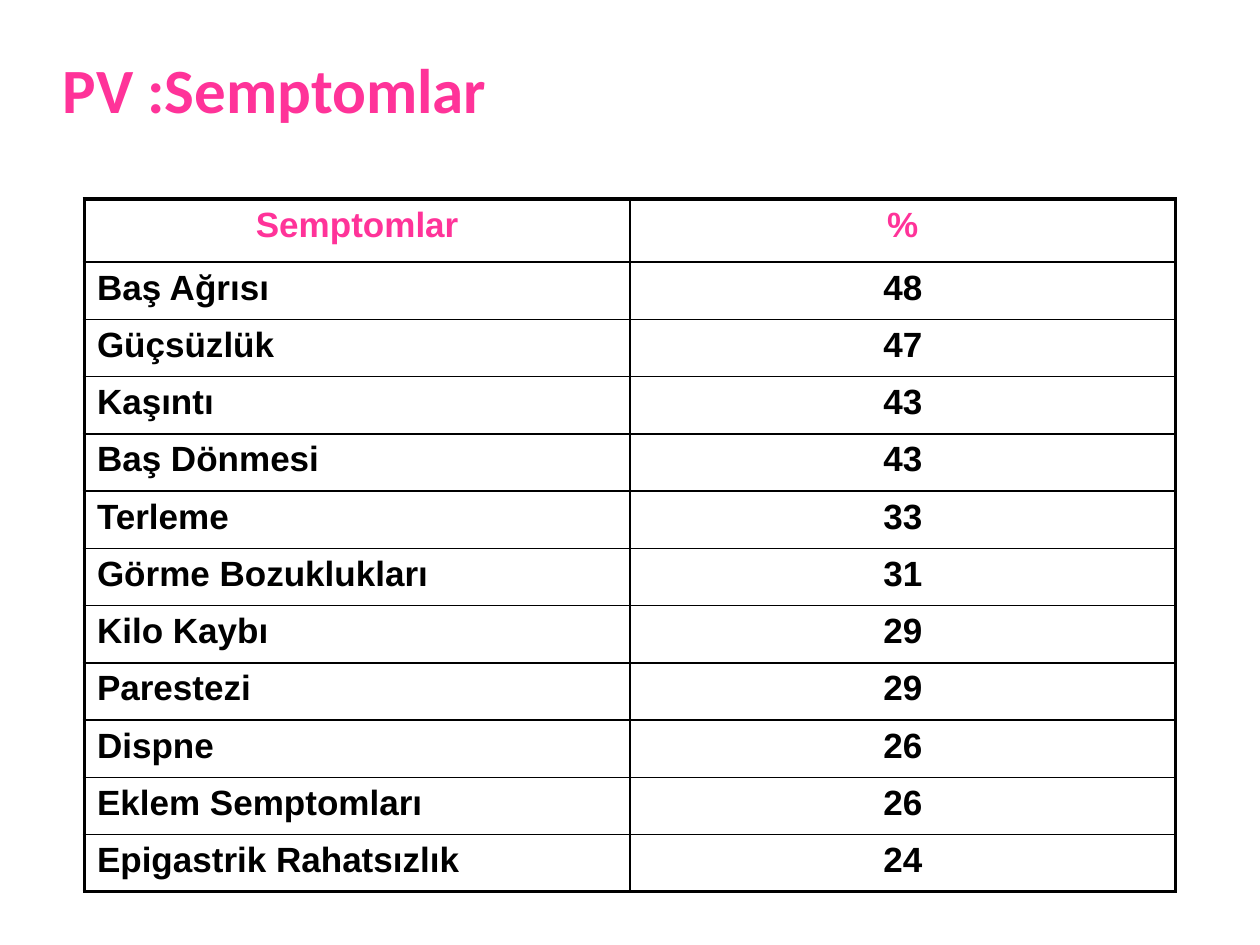
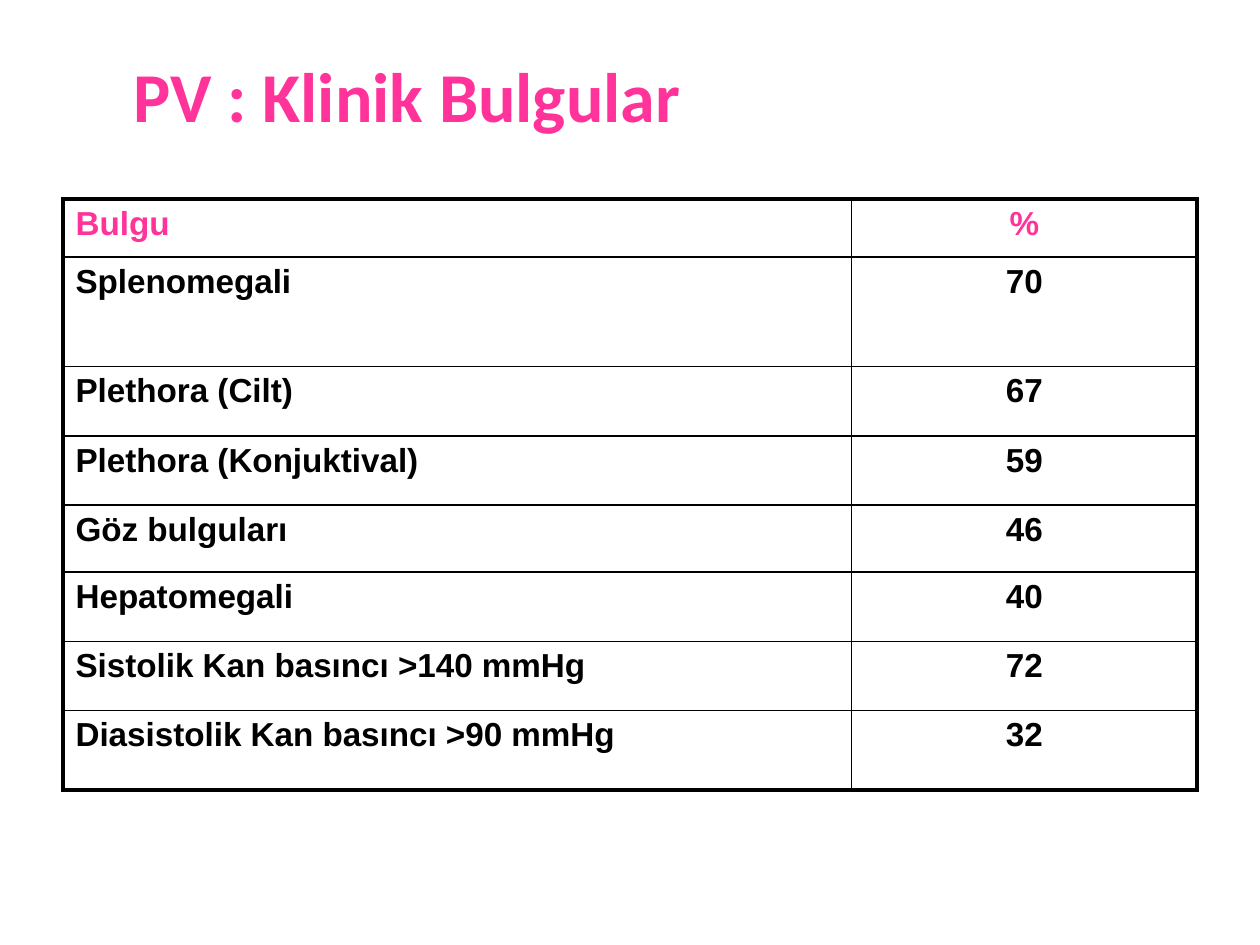
from lxml import etree
from pptx import Presentation
from pptx.dml.color import RGBColor
from pptx.enum.text import MSO_ANCHOR, PP_ALIGN
from pptx.oxml.ns import qn
from pptx.util import Inches, Pt

PINK = RGBColor(0xFF, 0x33, 0x99)
BLACK = RGBColor(0x00, 0x00, 0x00)
WHITE = RGBColor(0xFF, 0xFF, 0xFF)
LEFT, CENTER = PP_ALIGN.LEFT, PP_ALIGN.CENTER
BOTTOM = MSO_ANCHOR.BOTTOM
TITLE_FONT, TABLE_FONT = "Calibri", "Arial"
TABLE_TOP = 1.58
OUTER_LINE, INNER_LINE = Pt(2.25), Pt(1)

symptoms = [
    ("Semptomlar", "%"),
    ("Baş Ağrısı", "48"),
    ("Güçsüzlük", "47"),
    ("Kaşıntı", "43"),
    ("Baş Dönmesi", "43"),
    ("Terleme", "33"),
    ("Görme Bozuklukları", "31"),
    ("Kilo Kaybı", "29"),
    ("Parestezi", "29"),
    ("Dispne", "26"),
    ("Eklem Semptomları", "26"),
    ("Epigastrik Rahatsızlık", "24"),
]
findings = [
    ("Bulgu", "%"),
    ("Splenomegali", "70"),
    ("Plethora (Cilt)", "67"),
    ("Plethora (Konjuktival)", "59"),
    ("Göz bulguları", "46"),
    ("Hepatomegali", "40"),
    ("Sistolik Kan basıncı >140 mmHg", "72"),
    ("Diasistolik Kan basıncı >90 mmHg", "32"),
]

# Title, title box, title size, table left, columns, rows, header alignment, text size, data
slide_plans = [
    ("PV :Semptomlar", (0.5, 0.31, 9, 0.69), 36, 0.67, [4.33, 4.33],
     [0.5] + [5 / 11] * 11, CENTER, 20, symptoms),
    ("PV : Klinik Bulgular", (1.06, 0.25, 8, 0.83), 40, 0.5, [6.26, 2.74],
     [0.46, 0.87, 0.55, 0.55, 0.53, 0.55, 0.55, 0.63], LEFT, 19, findings),
]


def style_paragraph(paragraph, font_name, size, color, alignment=LEFT):
    paragraph.alignment = alignment
    paragraph.font.name = font_name
    paragraph.font.size = Pt(size)
    paragraph.font.bold = True
    paragraph.font.color.rgb = color


def set_borders(cell, outer_edges):
    properties = cell._tc.get_or_add_tcPr()
    for position, (edge, is_outer) in enumerate(outer_edges.items()):
        width = OUTER_LINE if is_outer else INNER_LINE
        line = etree.Element(qn(f"a:{edge}"), w=str(int(width)))
        fill = etree.SubElement(line, qn("a:solidFill"))
        etree.SubElement(fill, qn("a:srgbClr"), val=str(BLACK))
        properties.insert(position, line)


presentation = Presentation()
presentation.slide_width = Inches(10)
presentation.slide_height = Inches(7.5)
blank_layout = presentation.slide_layouts[6]

for (title, title_box, title_size, table_left, column_widths, row_heights,
     header_alignment, text_size, data) in slide_plans:
    slide = presentation.slides.add_slide(blank_layout)

    # Title
    text_frame = slide.shapes.add_textbox(*map(Inches, title_box)).text_frame
    text_frame.word_wrap = True
    text_frame.vertical_anchor = BOTTOM
    text_frame.margin_left = text_frame.margin_right = text_frame.margin_bottom = 0
    text_frame.margin_top = Inches(0.05)
    text_frame.text = title
    style_paragraph(text_frame.paragraphs[0], TITLE_FONT, title_size, PINK)

    # Table frame
    table = slide.shapes.add_table(
        len(data), 2, Inches(table_left), Inches(TABLE_TOP),
        Inches(sum(column_widths)), Inches(sum(row_heights))).table
    table.first_row = table.horz_banding = False
    for column, width in zip(table.columns, column_widths):
        column.width = Inches(width)
    for row, height in zip(table.rows, row_heights):
        row.height = Inches(height)

    # Table cells
    for row_index, values in enumerate(data):
        for column_index, value in enumerate(values):
            cell = table.cell(row_index, column_index)
            cell.text = value
            cell.fill.solid()
            cell.fill.fore_color.rgb = WHITE
            is_header = row_index == 0
            label_alignment = header_alignment if is_header else LEFT
            style_paragraph(cell.text_frame.paragraphs[0], TABLE_FONT, text_size,
                            PINK if is_header else BLACK,
                            CENTER if column_index == 1 else label_alignment)
            set_borders(cell, {"lnL": column_index == 0, "lnR": column_index == 1,
                               "lnT": is_header, "lnB": row_index == len(data) - 1})

presentation.save("out.pptx")
